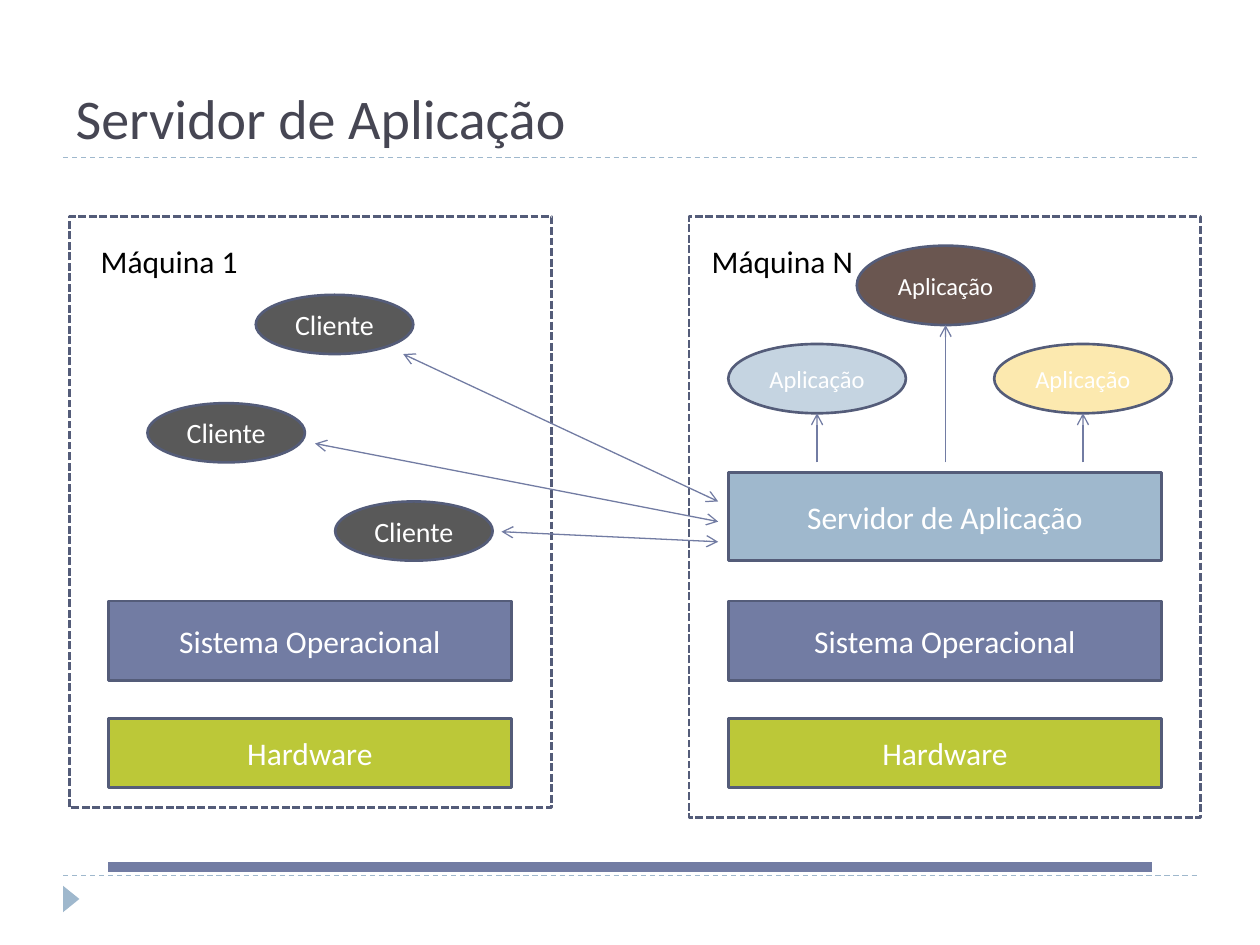
from lxml import etree
from pptx import Presentation
from pptx.dml.color import RGBColor
from pptx.enum import dml, shapes, text
from pptx.oxml import ns
from pptx.util import Inches, Pt

FONT = "Calibri"
WHITE = RGBColor(0xFF, 0xFF, 0xFF)
BLACK = RGBColor(0, 0, 0)
TITLE_GREY = RGBColor(0x46, 0x46, 0x53)
OUTLINE = RGBColor(0x54, 0x5C, 0x79)
INDIGO = RGBColor(0x72, 0x7C, 0xA3)
BLUE = RGBColor(0x9F, 0xB8, 0xCD)
PALE_BLUE = RGBColor(0xC5, 0xD4, 0xE1)
GREEN = RGBColor(0xBC, 0xC8, 0x38)
GREY = RGBColor(0x59, 0x59, 0x59)
BROWN = RGBColor(0x6A, 0x56, 0x50)
YELLOW = RGBColor(0xFC, 0xE9, 0xAF)

RECT = shapes.MSO_SHAPE.RECTANGLE
OVAL = shapes.MSO_SHAPE.OVAL
DASH = dml.MSO_LINE.DASH
SYS_DASH = dml.MSO_LINE.SQUARE_DOT

TITLE = "Servidor de Aplicação"
MACHINES = [
    {"name": "Máquina 1", "frame": (0.55, 1.72, 3.83, 4.69),
     "label": (0.7, 1.87, 1.41, 0.4), "layers": (0.86, 3.2)},
    {"name": "Máquina N", "frame": (5.47, 1.72, 4.06, 4.77),
     "label": (5.55, 1.87, 1.33, 0.4), "layers": (5.78, 3.44)},
]
LAYERS = [("Hardware", 5.7, 0.55, GREEN), ("Sistema Operacional", 4.77, 0.63, INDIGO)]
SERVER = ("Servidor de Aplicação", 3.75, 0.7, BLUE)
CLIENT_SIZE = (1.25, 0.47)
CLIENTS = [
    {"at": (2.03, 2.34), "link": (3.2, 2.81)},
    {"at": (1.17, 3.2), "link": (2.5, 3.52)},
    {"at": (2.66, 3.98), "link": (3.98, 4.22)},
]
SERVER_LINK_X, SERVER_LINK_Y, SERVER_LINK_STEP = 5.7, 3.98, 0.16
APP_WIDTH, APP_ARROW_START = 1.41, 3.67
APPS = [
    (6.8, 1.95, 0.63, BROWN),
    (5.78, 2.73, 0.55, PALE_BLUE),
    (7.89, 2.73, 0.55, YELLOW),
]
RULES = [(0.5, 9.5, 6.95, BLUE, 0.75, DASH), (0.5, 9.5, 1.25, BLUE, 0.75, DASH),
         (0.86, 9.14, 6.88, INDIGO, 6, None)]

deck = Presentation()
deck.slide_width, deck.slide_height = Inches(10), Inches(7.5)
slide = deck.slides.add_slide(deck.slide_layouts[5])


def write(holder, words, size, color, align):
    frame = holder.text_frame
    paragraph = frame.paragraphs[0]
    paragraph.alignment = align
    run = paragraph.add_run()
    run.text = words
    run.font.name, run.font.size, run.font.color.rgb = FONT, Pt(size), color
    return frame


def block(kind, box, fill, words=None, size=18, dash=None):
    part = slide.shapes.add_shape(kind, *map(Inches, box))
    part.shadow.inherit = False
    part.fill.solid()
    part.fill.fore_color.rgb = fill
    part.line.color.rgb, part.line.width = OUTLINE, Pt(1.5)
    if dash:
        part.line.dash_style = dash
    if words:
        frame = write(part, words, size, WHITE, text.PP_ALIGN.CENTER)
        frame.vertical_anchor = text.MSO_ANCHOR.MIDDLE
    return part


def line(start, end, color=INDIGO, width=0.75, dash=None, arrows=()):
    link = slide.shapes.add_connector(
        shapes.MSO_CONNECTOR.STRAIGHT, *map(Inches, (*start, *end)))
    link.line.color.rgb, link.line.width = color, Pt(width)
    if dash:
        link.line.dash_style = dash
    for arrow in arrows:
        etree.SubElement(link.line._get_or_add_ln(), ns.qn("a:" + arrow), type="arrow")
    etree.SubElement(link._element.spPr, ns.qn("a:effectLst"))


title = slide.shapes.title
title.left, title.top, title.width, title.height = map(Inches, (0.5, 0.17, 9, 1.08))
write(title, TITLE, 32, TITLE_GREY, text.PP_ALIGN.LEFT).vertical_anchor = text.MSO_ANCHOR.BOTTOM

for left, right, y, color, width, dash in RULES:
    line((left, y), (right, y), color, width, dash)

marker = block(shapes.MSO_SHAPE.ISOSCELES_TRIANGLE, (0.46, 7.07, 0.21, 0.13), BLUE)
marker.rotation = 90
marker.line.fill.background()

for machine in MACHINES:
    block(RECT, machine["frame"], WHITE, dash=SYS_DASH)
    left, width = machine["layers"]
    for words, top, height, fill in LAYERS:
        block(RECT, (left, top, width, height), fill, words)

words, top, height, fill = SERVER
left, width = MACHINES[1]["layers"]
block(RECT, (left, top, width, height), fill, words)

for index, client in enumerate(CLIENTS):
    block(OVAL, (*client["at"], *CLIENT_SIZE), GREY, "Cliente", 16)
    line(client["link"], (SERVER_LINK_X, SERVER_LINK_Y + index * SERVER_LINK_STEP),
         arrows=("headEnd", "tailEnd"))

for left, top, height, fill in APPS:
    block(OVAL, (left, top, APP_WIDTH, height), fill, "Aplicação", 14)
    center = left + APP_WIDTH / 2
    line((center, APP_ARROW_START), (center, top + height), arrows=("tailEnd",))

for machine in MACHINES:
    label = slide.shapes.add_textbox(*map(Inches, machine["label"]))
    frame = write(label, machine["name"], 18, BLACK, text.PP_ALIGN.LEFT)
    frame.word_wrap = True
    frame.auto_size = text.MSO_AUTO_SIZE.SHAPE_TO_FIT_TEXT

deck.save("out.pptx")
